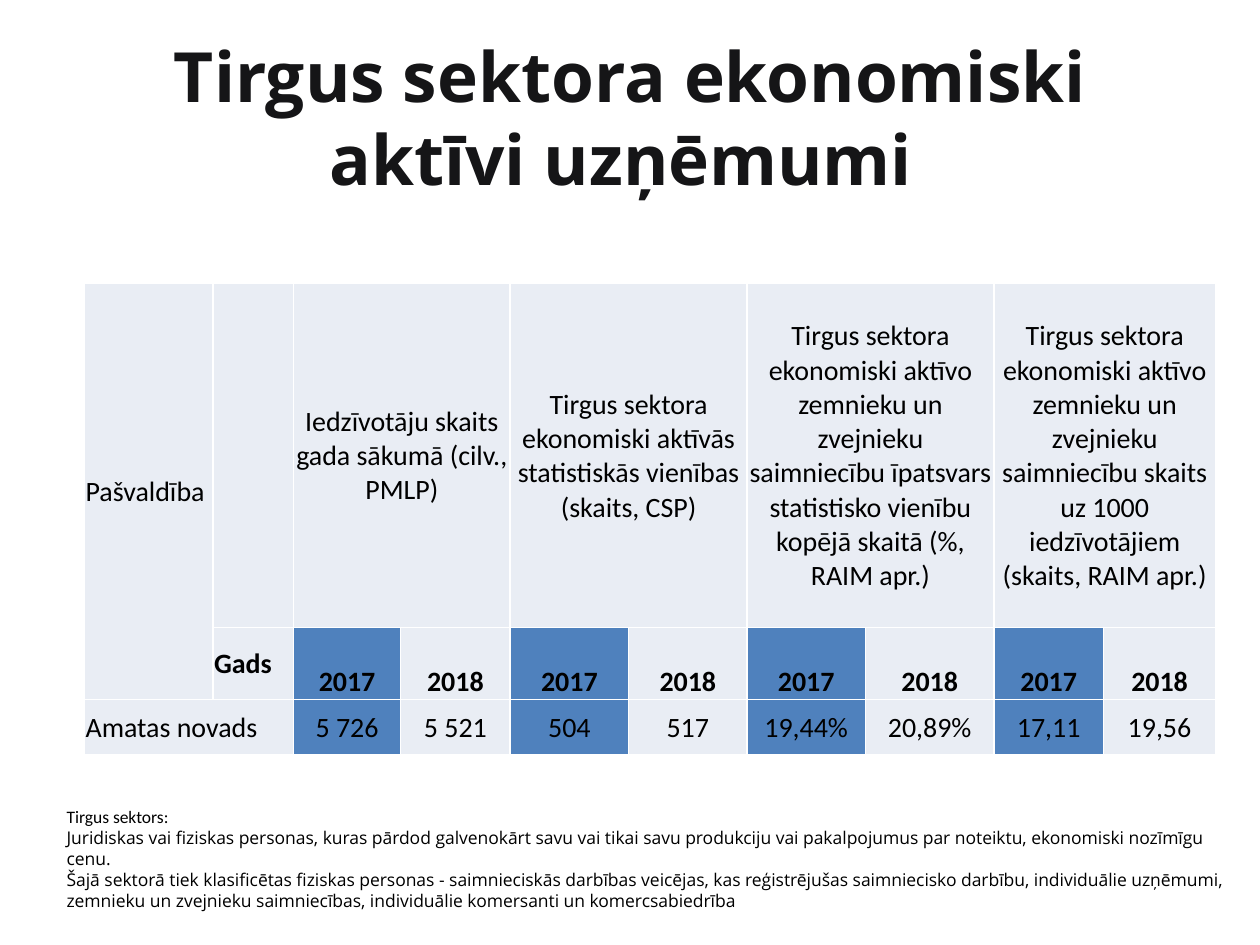
from lxml import etree
from pptx import Presentation
from pptx.dml.color import RGBColor
from pptx.enum.text import MSO_ANCHOR, MSO_AUTO_SIZE, PP_ALIGN
from pptx.oxml.ns import qn
from pptx.util import Inches, Pt

LEFT, CENTER = PP_ALIGN.LEFT, PP_ALIGN.CENTER
MIDDLE, BOTTOM = MSO_ANCHOR.MIDDLE, MSO_ANCHOR.BOTTOM
GROW = MSO_AUTO_SIZE.SHAPE_TO_FIT_TEXT
BLACK = RGBColor(0x00, 0x00, 0x00)
INK = RGBColor(0x15, 0x15, 0x17)
PALE = RGBColor(0xE9, 0xED, 0xF4)
BLUE = RGBColor(0x4F, 0x81, 0xBD)
WHITE = RGBColor(0xFF, 0xFF, 0xFF)

TITLE = "Tirgus sektora ekonomiski aktīvi uzņēmumi "
COLS = [1.02, 0.64, 0.85, 0.87, 0.94, 0.94, 0.94, 1.02, 0.87, 0.89]
ROWS = [2.73, 0.57, 0.44]
INDICATORS = [
    ("Iedzīvotāju skaits gada sākumā (cilv., PMLP)", "5 726", "5 521"),
    ("Tirgus sektora ekonomiski aktīvās statistiskās vienības (skaits, CSP)",
     "504", "517"),
    ("Tirgus sektora ekonomiski aktīvo zemnieku un zvejnieku saimniecību "
     "īpatsvars statistisko vienību kopējā skaitā (%, RAIM apr.)",
     "19,44%", "20,89%"),
    ("Tirgus sektora ekonomiski aktīvo zemnieku un zvejnieku saimniecību "
     "skaits uz 1000 iedzīvotājiem (skaits, RAIM apr.)", "17,11", "19,56"),
]
YEARS = [("2017", BLUE), ("2018", PALE)]
NOTES = [
    ("Tirgus sektors:", "Calibri"),
    ("Juridiskas vai fiziskas personas, kuras pārdod galvenokārt savu vai "
     "tikai savu produkciju vai pakalpojumus par noteiktu, ekonomiski "
     "nozīmīgu cenu.", "Open Sans"),
    ("Šajā sektorā tiek klasificētas fiziskas personas - saimnieciskās "
     "darbības veicējas, kas reģistrējušas saimniecisko darbību, "
     "individuālie uzņēmumi, zemnieku un zvejnieku saimniecības, "
     "individuālie komersanti un komercsabiedrība", "Open Sans"),
]


def write(p, text, size=16, font="Calibri", color=BLACK, bold=False, align=LEFT):
    """Add one formatted run to a paragraph."""
    p.alignment = align
    r = p.add_run()
    r.text = text
    r.font.size = Pt(size)
    r.font.name = font
    r.font.color.rgb = color
    r.font.bold = bold


def add_borders(cell):
    """Draw a thin white line on every side of a cell."""
    pr = cell._tc.get_or_add_tcPr()
    for i, side in enumerate(("lnL", "lnR", "lnT", "lnB")):
        ln = etree.Element(qn(f"a:{side}"), w=str(Pt(1)))
        fill = etree.SubElement(ln, qn("a:solidFill"))
        etree.SubElement(fill, qn("a:srgbClr"), val=str(WHITE))
        pr.insert(i, ln)


def fill_cell(cell, text, fill=PALE, anchor=MIDDLE, **fmt):
    """Fill a cell and write its text."""
    cell.fill.solid()
    cell.fill.fore_color.rgb = fill
    cell.vertical_anchor = anchor
    write(cell.text_frame.paragraphs[0], text, **fmt)


def add_title(s, x, y, w, h):
    """Place and format the slide title."""
    sp = s.shapes.title
    sp.left, sp.top, sp.width, sp.height = map(Inches, (x, y, w, h))
    tf = sp.text_frame
    tf.vertical_anchor = MIDDLE
    write(tf.paragraphs[0], TITLE, size=39.6, font="Open Sans", color=INK,
          bold=True, align=CENTER)


def add_indicators(s, x, y, w, h):
    """Build the table of indicators by year."""
    table = s.shapes.add_table(len(ROWS), len(COLS), *map(Inches, (x, y, w, h))).table
    table.first_row = table.horz_banding = False
    for col, width in zip(table.columns, COLS):
        col.width = Inches(width)
    for row, height in zip(table.rows, ROWS):
        row.height = Inches(height)
    for cell in table.iter_cells():
        cell.margin_left = cell.margin_right = cell.margin_top = Inches(0.01)
        cell.margin_bottom = 0
        add_borders(cell)

    table.cell(0, 0).merge(table.cell(1, 0))
    table.cell(2, 0).merge(table.cell(2, 1))
    fill_cell(table.cell(0, 0), "Pašvaldība")
    fill_cell(table.cell(0, 1), "")
    fill_cell(table.cell(1, 1), "Gads", bold=True)
    fill_cell(table.cell(2, 0), "Amatas novads")
    for i, (heading, *values) in enumerate(INDICATORS):
        first = 2 + 2 * i
        table.cell(0, first).merge(table.cell(0, first + 1))
        fill_cell(table.cell(0, first), heading, align=CENTER)
        for c, ((year, fill), value) in enumerate(zip(YEARS, values), first):
            fill_cell(table.cell(1, c), year, fill, BOTTOM, bold=True, align=CENTER)
            fill_cell(table.cell(2, c), value, fill, align=CENTER)


def add_notes(s, x, y, w, h):
    """Write the definition of the sector below the table."""
    tf = s.shapes.add_textbox(*map(Inches, (x, y, w, h))).text_frame
    tf.word_wrap = True
    tf.auto_size = GROW
    for i, (text, font) in enumerate(NOTES):
        p = tf.add_paragraph() if i else tf.paragraphs[0]
        write(p, text, size=10, font=font)


def main():
    """Build the slide and save it."""
    prs = Presentation()
    prs.slide_width, prs.slide_height = Inches(10), Inches(7.5)
    s = prs.slides.add_slide(prs.slide_layouts[5])
    add_title(s, 0.5, 0.3, 9, 1.25)
    add_notes(s, 0.43, 6.35, 9.39, 1.08)
    add_indicators(s, 0.67, 2.25, sum(COLS), sum(ROWS))
    prs.save("out.pptx")


if __name__ == "__main__":
    main()
